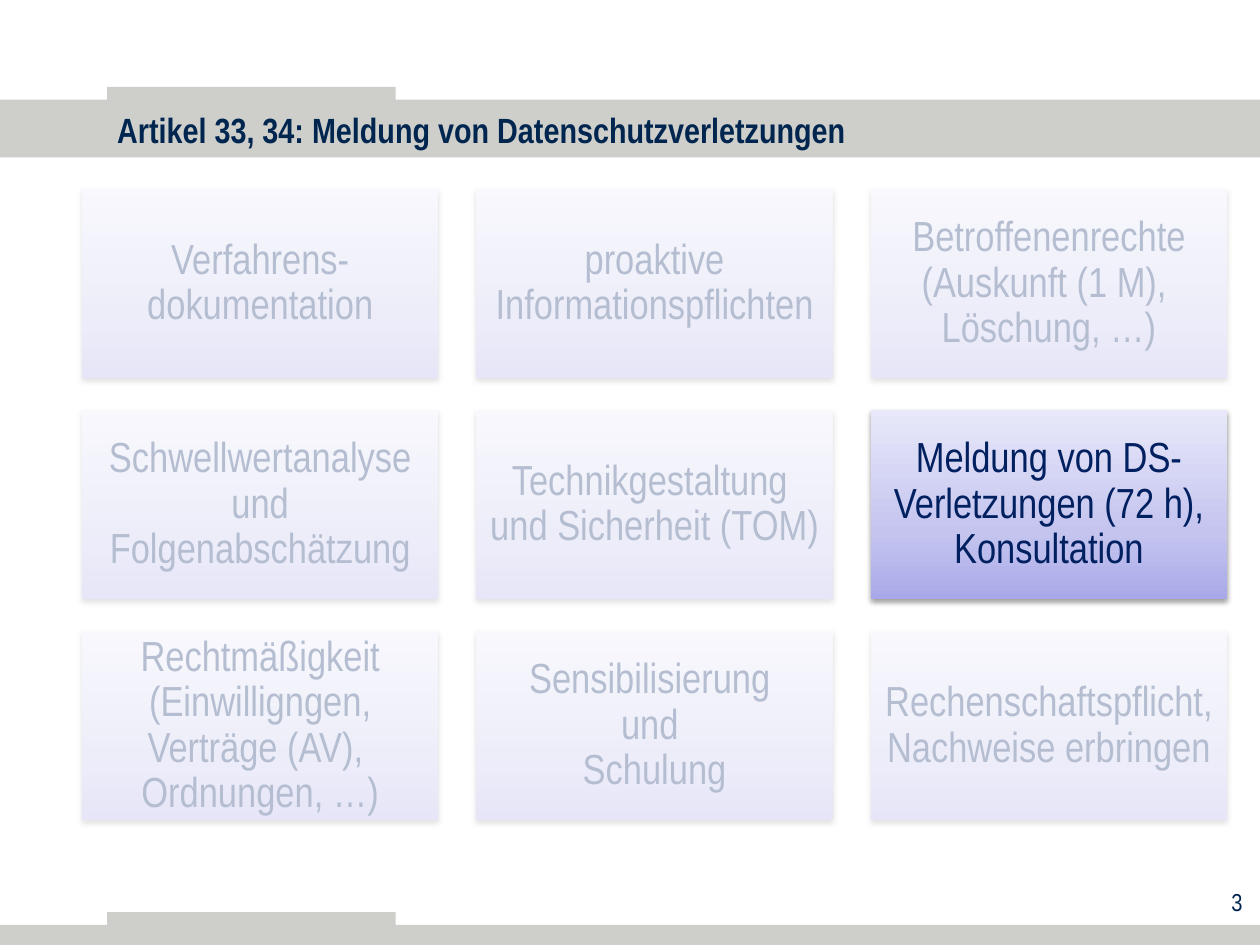
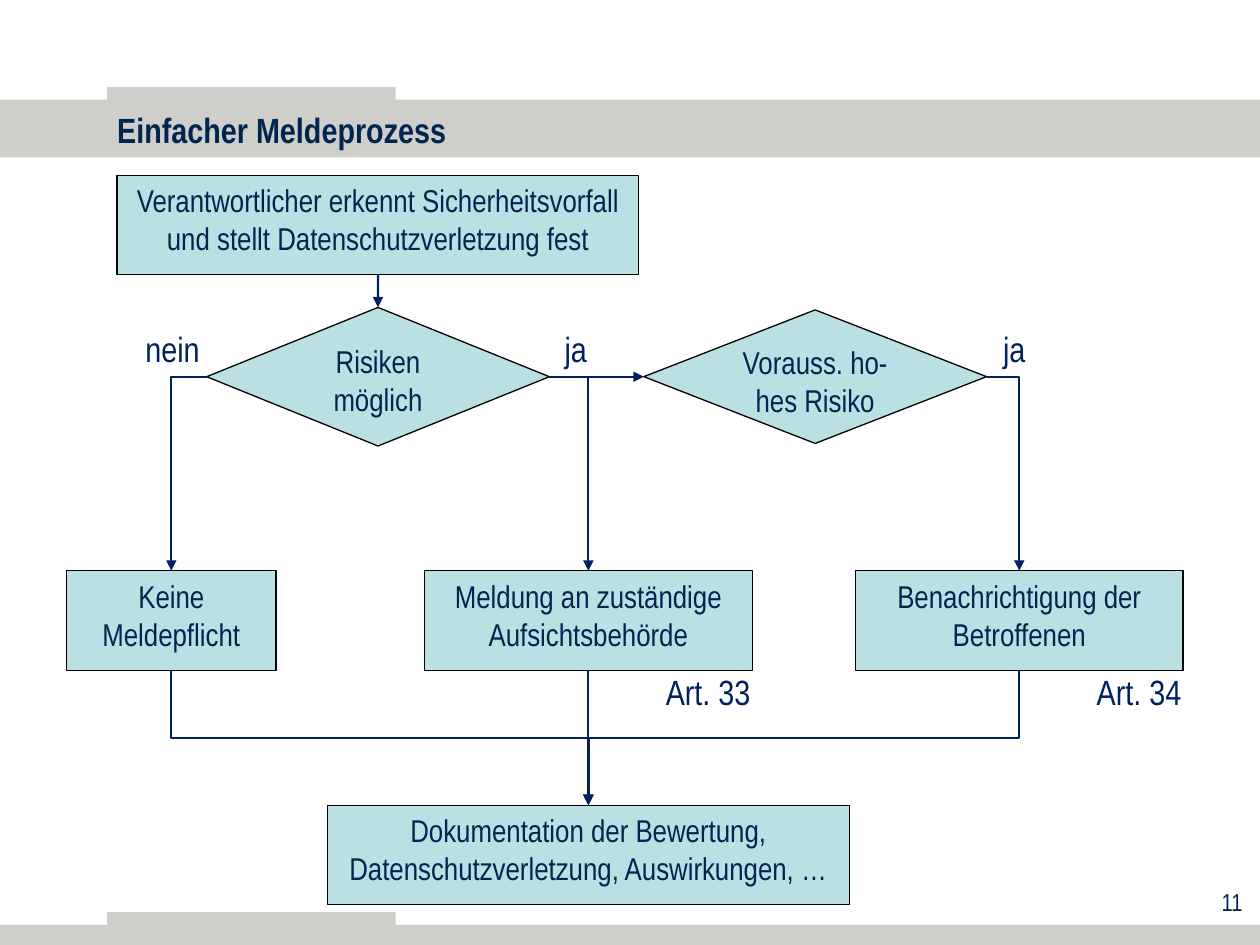
from lxml import etree
from pptx import Presentation
from pptx.dml.color import RGBColor
from pptx.enum.shapes import MSO_CONNECTOR, MSO_SHAPE
from pptx.enum.text import MSO_ANCHOR, PP_ALIGN
from pptx.oxml import parse_xml
from pptx.oxml.ns import nsdecls, qn
from pptx.util import Inches, Pt

COLORS = {
    "band": "CECFCB",
    "text": "00254F",
    "navy": "002060",
    "node": "BBE0E3",
    "black": "000000",
    "white": "FFFFFF",
}
TILE_STOPS = [(0, "A9A9E9"), (35, "C4C4EF"), (100, "E8E8FA")]
FONT = "Arial Narrow"
TOP, LEFT, BOTTOM, RIGHT = range(4)


def rgb(name):
    return RGBColor.from_string(COLORS[name])


def inches(box):
    return [Inches(value) for value in box]


def format_text(frame, size, color, align=PP_ALIGN.CENTER, bold=False):
    for para in frame.paragraphs:
        para.alignment = align
        para.font.name = FONT
        para.font.size = Pt(size)
        para.font.bold = bold
        para.font.color.rgb = rgb(color)


def set_insets(frame, left, top, right, bottom):
    frame.margin_left, frame.margin_top = Inches(left), Inches(top)
    frame.margin_right, frame.margin_bottom = Inches(right), Inches(bottom)


def add_box(page, kind, box, fill=None):
    shape = page.shapes.add_shape(kind, *inches(box))
    shape.shadow.inherit = False
    shape.line.fill.background()
    if fill:
        shape.fill.solid()
        shape.fill.fore_color.rgb = rgb(fill)
    return shape


def add_label(page, text, box, size, color, align=PP_ALIGN.CENTER, wrap=False):
    label = page.shapes.add_textbox(*inches(box))
    frame = label.text_frame
    frame.word_wrap = wrap
    frame.text = text
    format_text(frame, size, color, align)


# Shared frame: bands on the layout, title and number on each slide
def move_bands_to_layout(page):
    tree = page.slide_layout.shapes._spTree
    bands = [(0, 0.79, 10, 0.46), (0, 7.34, 10, 0.16),
             (0.85, 0.69, 2.29, 0.13), (0.85, 7.24, 2.29, 0.13)]
    for index, box in enumerate(bands):
        band = add_box(page, MSO_SHAPE.RECTANGLE, box, "band")
        tree.insert(2 + index, band._element)


def add_page(deck, title, number):
    page = deck.slides.add_slide(deck.slide_layouts[5])
    heading = page.shapes.title
    heading.left, heading.top, heading.width, heading.height = inches(
        (0.83, 0.82, 8.7, 0.42))
    frame = heading.text_frame
    frame.text = title
    frame.vertical_anchor = MSO_ANCHOR.MIDDLE
    format_text(frame, 20, "text", PP_ALIGN.LEFT, bold=True)
    add_label(page, number, (7.74, 6.99, 2.22, 0.43), 14, "text",
              PP_ALIGN.RIGHT, wrap=True)
    return page


# Topic grid
def add_tile(page, text, box):
    tile = add_box(page, MSO_SHAPE.RECTANGLE, box)
    properties = tile._element.spPr
    stops = "".join(
        f'<a:gs pos="{place * 1000}"><a:srgbClr val="{color}"/></a:gs>'
        for place, color in TILE_STOPS)
    gradient = parse_xml(
        f'<a:gradFill {nsdecls("a")} rotWithShape="1"><a:gsLst>{stops}</a:gsLst>'
        '<a:lin ang="16200000" scaled="0"/></a:gradFill>')
    properties.find(qn("a:prstGeom")).addnext(gradient)
    properties.find(qn("a:effectLst")).append(parse_xml(
        f'<a:outerShdw {nsdecls("a")} blurRad="{Pt(3.1)}" dist="{Pt(1.6)}" '
        'dir="5400000" rotWithShape="0"><a:srgbClr val="000000">'
        '<a:alpha val="38000"/></a:srgbClr></a:outerShdw>'))
    frame = tile.text_frame
    frame.word_wrap = True
    frame.vertical_anchor = MSO_ANCHOR.MIDDLE
    set_insets(frame, 0.1, 0.1, 0.1, 0.1)
    frame.text = text
    format_text(frame, 24, "navy")
    frame.paragraphs[0].line_spacing = 0.9


def add_veil(page, box):
    veil = add_box(page, MSO_SHAPE.RECTANGLE, box, "white")
    color = veil._element.spPr.find(qn("a:solidFill"))[0]
    etree.SubElement(color, qn("a:alpha"), val="71000")


def add_topic_grid(page, box, topics):
    left, top, width, height = box
    tile_width, tile_height = 2.83, 1.5
    step_x = (width - tile_width) / (len(topics[0]) - 1)
    step_y = (height - tile_height) / (len(topics) - 1)
    for row, names in enumerate(topics):
        for column, name in enumerate(names):
            add_tile(page, name, (left + column * step_x, top + row * step_y,
                                  tile_width, tile_height))


def build_topics(deck):
    page = add_page(deck, "Artikel 33, 34: Meldung von Datenschutzverletzungen", "3")
    move_bands_to_layout(page)
    add_topic_grid(page, (0.65, 1.5, 9.09, 5.01), [
        ["Verfahrens-dokumentation",
         "proaktive Informationspflichten",
         "Betroffenenrechte (Auskunft (1 M), \vLöschung, …)"],
        ["Schwellwertanalyse und Folgenabschätzung",
         "Technikgestaltung \vund Sicherheit (TOM)",
         "Meldung von DS-Verletzungen (72 h), Konsultation"],
        ["Rechtmäßigkeit (Einwilligngen, Verträge (AV), \vOrdnungen, …)",
         "Sensibilisierung \vund \vSchulung",
         "Rechenschaftspflicht, Nachweise erbringen"],
    ])
    # Veils leave only the current topic in full colour
    for box in [(6.82, 1.3, 3.18, 1.84), (6.82, 4.93, 3.18, 1.76),
                (0.34, 1.3, 6.39, 5.52)]:
        add_veil(page, box)


# Flow chart
def add_node(page, kind, text, box):
    node = add_box(page, kind, box, "node")
    node.line.color.rgb = rgb("black")
    node.line.width = Pt(0.75)
    frame = node.text_frame
    frame.word_wrap = True
    frame.vertical_anchor = MSO_ANCHOR.TOP
    if kind == MSO_SHAPE.FLOWCHART_DECISION:
        set_insets(frame, 0.1, 0, 0.1, 0.05)
    frame.text = text
    format_text(frame, 18, "text")
    return node


def add_step(page, text, box):
    return add_node(page, MSO_SHAPE.FLOWCHART_PROCESS, text, box)


def add_decision(page, text, box):
    return add_node(page, MSO_SHAPE.FLOWCHART_DECISION, text, box)


def add_arrow(page, start, start_side, goal, goal_side, kind=MSO_CONNECTOR.STRAIGHT):
    arrow = page.shapes.add_connector(kind, 0, 0, 0, 0)
    arrow.begin_connect(start, start_side)
    arrow.end_connect(goal, goal_side)
    arrow.line.color.rgb = rgb("navy")
    arrow.line.width = Pt(1.25)
    properties = arrow._element.spPr
    line = properties.find(qn("a:ln"))
    etree.SubElement(line, qn("a:tailEnd"), type="triangle")
    etree.SubElement(properties, qn("a:effectLst"))
    return arrow


def add_corner_arrow(page, start, start_side, goal):
    arrow = add_arrow(page, start, start_side, goal, TOP, MSO_CONNECTOR.ELBOW)
    arrow._element.spPr.find(qn("a:prstGeom")).set("prst", "bentConnector2")


def add_merge_arrow(page, start, goal):
    """Run down, across and down: an elbow turned by a quarter."""
    arrow = add_arrow(page, start, BOTTOM, goal, TOP, MSO_CONNECTOR.ELBOW)
    across = arrow.end_x - arrow.begin_x
    down = arrow.end_y - arrow.begin_y
    center_x = (arrow.begin_x + arrow.end_x) // 2
    center_y = (arrow.begin_y + arrow.end_y) // 2
    arrow.left, arrow.top = center_x - down // 2, center_y - abs(across) // 2
    arrow.width, arrow.height = down, abs(across)
    arrow.rotation = 90
    frame = arrow._element.spPr.find(qn("a:xfrm"))
    frame.set("flipH", "0")
    frame.set("flipV", "1" if across > 0 else "0")


def build_process(deck):
    page = add_page(deck, "Einfacher Meldeprozess", "11")

    # Steps and decisions
    risk = add_decision(page, "Risiken möglich", (1.64, 2.44, 2.72, 1.1))
    incident = add_step(
        page, "Verantwortlicher erkennt Sicherheitsvorfall und stellt "
        "Datenschutzverletzung fest", (0.93, 1.39, 4.14, 0.79))
    no_duty = add_step(page, "Keine Meldepflicht", (0.53, 4.53, 1.66, 0.79))
    report = add_step(page, "Meldung an zuständige Aufsichtsbehörde",
                      (3.37, 4.53, 2.6, 0.79))
    record = add_step(
        page, "Dokumentation der Bewertung, Datenschutzverletzung, "
        "Auswirkungen, …", (2.6, 6.39, 4.14, 0.79))
    notice = add_step(page, "Benachrichtigung der Betroffenen",
                      (6.79, 4.53, 2.6, 0.79))
    high_risk = add_decision(page, "Vorauss. ho-hes Risiko", (5.11, 2.46, 2.72, 1.06))

    # Arrows
    add_arrow(page, incident, BOTTOM, risk, TOP)
    add_arrow(page, risk, RIGHT, high_risk, LEFT)
    add_arrow(page, report, BOTTOM, record, TOP)
    add_corner_arrow(page, risk, LEFT, no_duty)
    add_corner_arrow(page, risk, RIGHT, report)
    add_corner_arrow(page, high_risk, RIGHT, notice)
    add_merge_arrow(page, no_duty, record)
    add_merge_arrow(page, notice, record)

    # Answers and articles
    for text, left, top, width in [
            ("ja", 7.86, 2.55, 0.38), ("ja", 4.38, 2.55, 0.38),
            ("nein", 1.05, 2.55, 0.64),
            ("Art. 33", 5.18, 5.27, 0.88), ("Art. 34", 8.6, 5.27, 0.88)]:
        add_label(page, text, (left, top, width, 0.44), 20, "navy")


def main():
    deck = Presentation()
    deck.slide_width, deck.slide_height = Inches(10), Inches(7.5)
    build_topics(deck)
    build_process(deck)
    deck.save("out.pptx")


if __name__ == "__main__":
    main()
